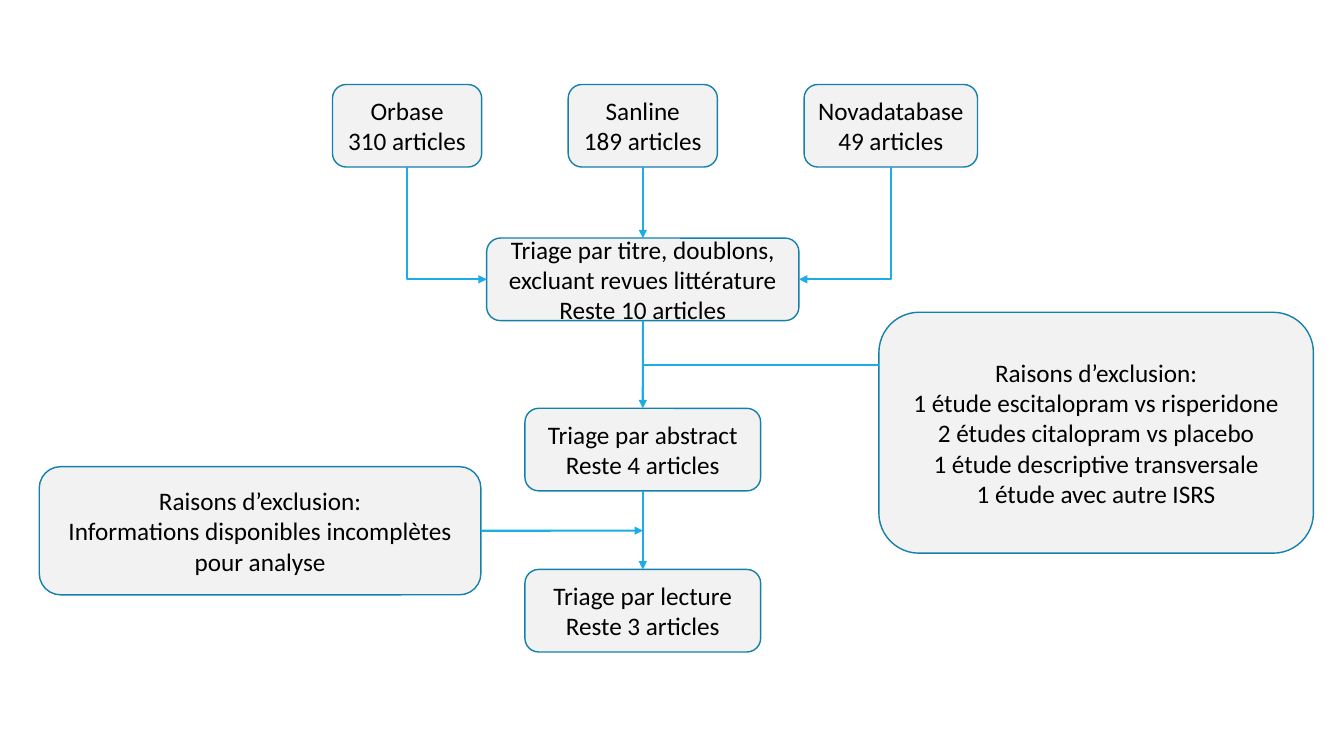
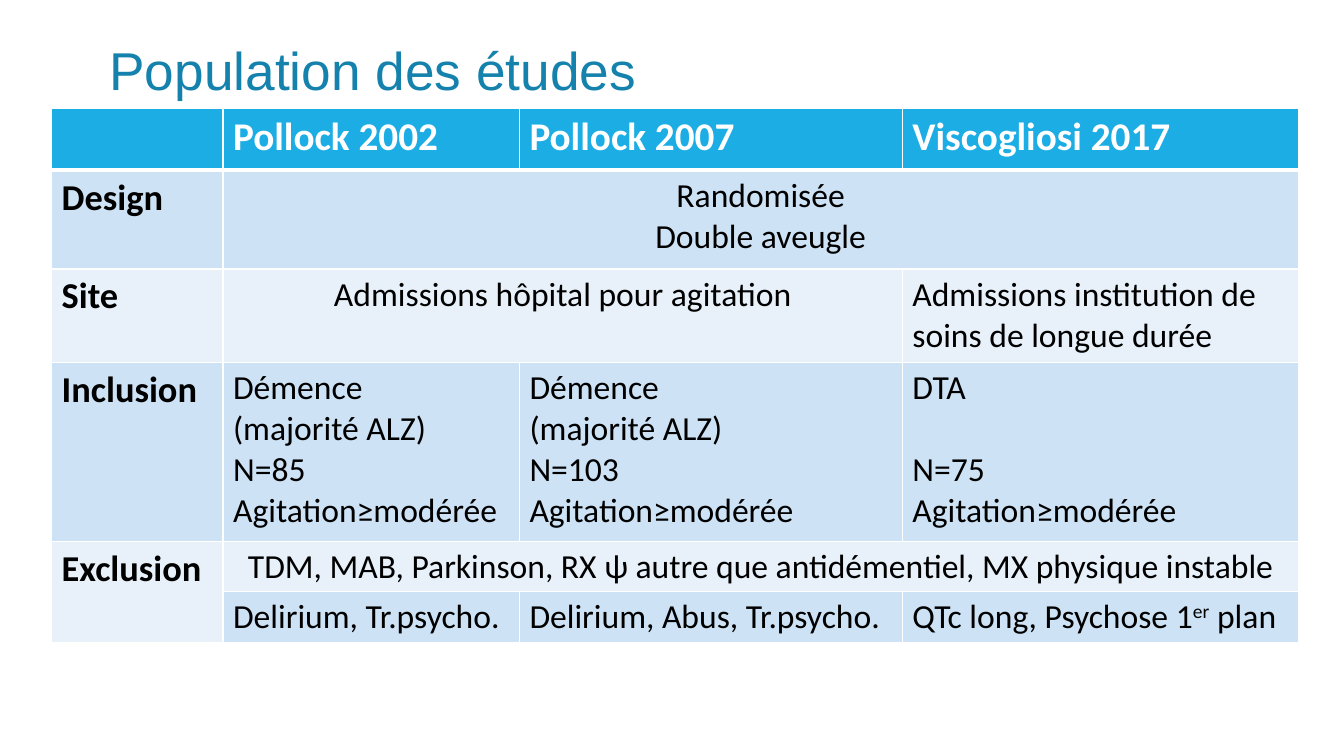
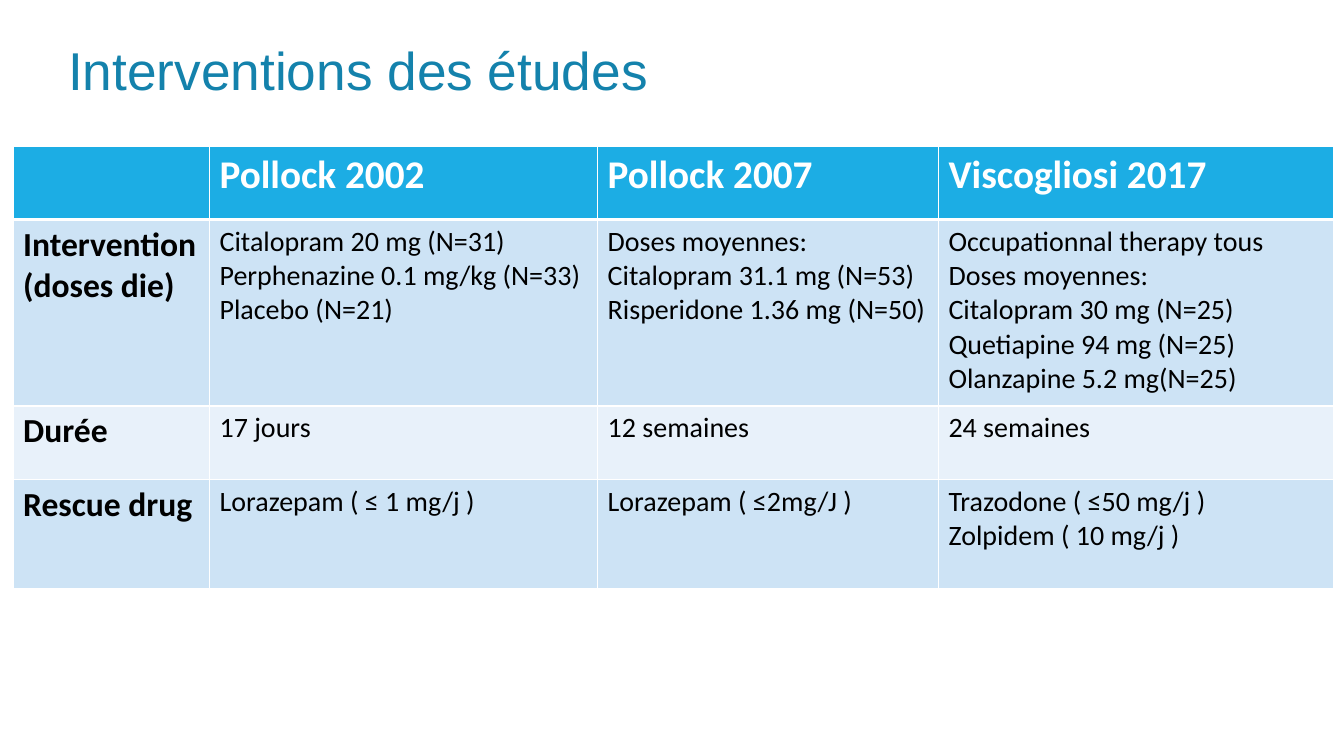
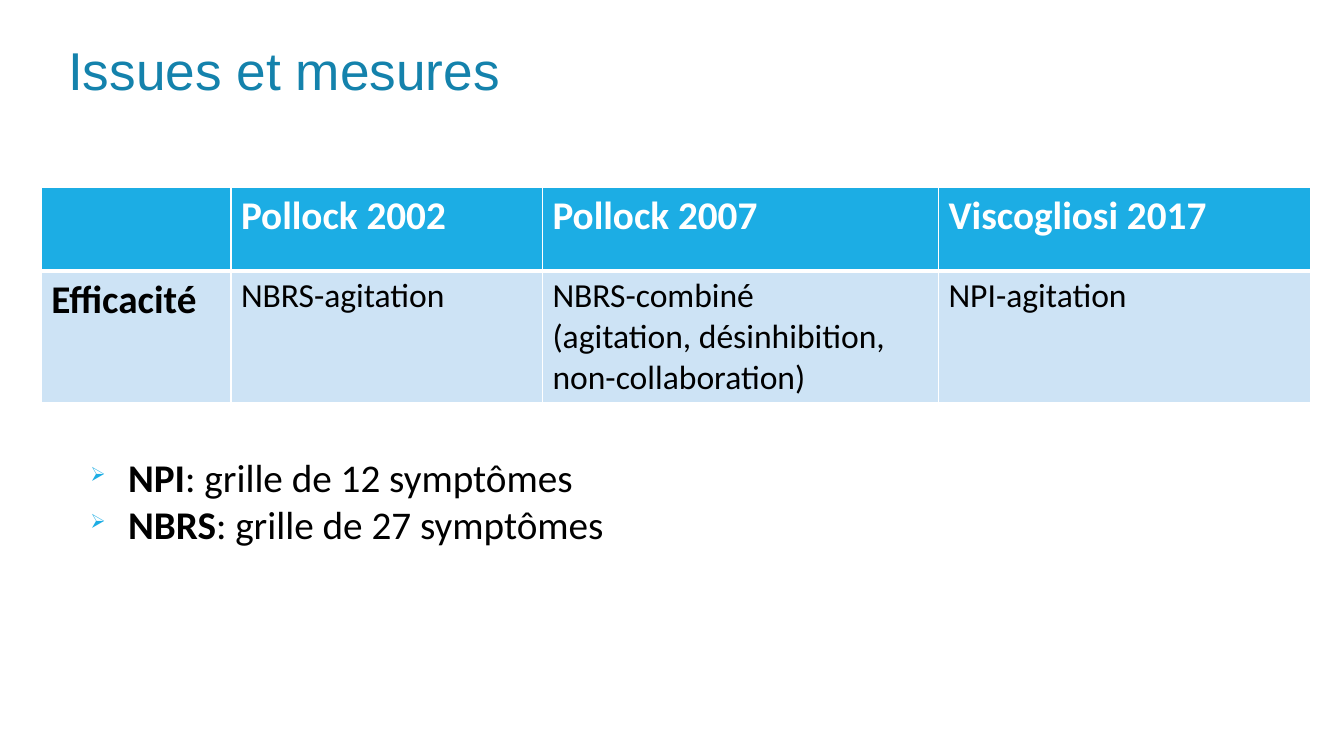
"""Build four slides on a literature review: selection flow, populations, interventions, outcomes."""
from lxml.etree import SubElement
from pptx import Presentation
from pptx.dml.color import RGBColor
from pptx.enum.shapes import MSO_CONNECTOR as Link, MSO_SHAPE as Preset
from pptx.enum.text import MSO_ANCHOR as Anchor, PP_ALIGN as Align
from pptx.oxml import parse_xml
from pptx.oxml.ns import nsdecls, qn
from pptx.util import Cm, Pt

BLACK, WHITE = "000000", "FFFFFF"
ACCENT, TITLE_BLUE, OUTLINE = "1CADE4", "1482AC", "1580A9"
BOX_FILL = "F2F2F2"
BANDS = ("E8F1FA", "CDE3F5")
TOP, LEFT, BOTTOM, RIGHT = range(4)

AXIS = 16.2
BOX_HEIGHT = 2.08
SOURCES = [
    ("Orbase\n310 articles", 10.26, 3.76),
    ("Sanline\n189 articles", AXIS, 3.76),
    ("Novadatabase\n49 articles", 22.45, 4.37),
]
SOURCE_TOP = 2.13
STEPS = [
    ("Triage par titre, doublons, excluant revues littérature\nReste 10 articles", 6, 7.87),
    ("Triage par abstract\nReste 4 articles", 10.29, 5.94),
    ("Triage par lecture\nReste 3 articles", 14.35, 5.94),
]
ABSTRACT_REASONS = (
    "Raisons d’exclusion:\n1 étude escitalopram vs risperidone\n2 études citalopram vs placebo\n"
    "1 étude descriptive transversale\n1 étude avec autre ISRS"
)
READING_REASONS = "Raisons d’exclusion:\nInformations disponibles incomplètes pour analyse"

HEADER = ["", "Pollock 2002", "Pollock 2007", "Viscogliosi 2017"]
POPULATION = {
    "place": (1.3, 2.72),
    "columns": (4.32, 7.47, 9.65, 9.98),
    "heights": (1.57, 2.49, 2.36, 4.5, 1.14, 1.14),
    "sizes": (26, 24),
    "merges": [(1, 1, 1, 3), (2, 1, 2, 2), (4, 0, 5, 0), (4, 1, 4, 3)],
    "rows": [
        ["Design", "Randomisée\nDouble aveugle", "", ""],
        ["Site", "Admissions hôpital pour agitation", "",
         "Admissions institution de soins de longue durée"],
        ["Inclusion", "Démence\n(majorité ALZ)\nN=85 Agitation≥modérée",
         "Démence\n(majorité ALZ)\nN=103\nAgitation≥modérée", "DTA\nN=75\nAgitation≥modérée"],
        ["Exclusion",
         "TDM, MAB, Parkinson, RX ψ autre que antidémentiel, MX physique instable", "", ""],
        ["", "Delirium, Tr.psycho.", "Delirium, Abus, Tr.psycho.", "QTc long, Psychose 1"],
    ],
}
INTERVENTIONS = {
    "place": (0.33, 3.68),
    "columns": (4.95, 9.78, 8.59, 9.96),
    "heights": (1.85, 4.7, 1.85, 2.74),
    "sizes": (24, 20),
    "merges": [],
    "rows": [
        ["Intervention\n(doses die)",
         "Citalopram 20 mg (N=31)\nPerphenazine 0.1 mg/kg (N=33)\nPlacebo (N=21)",
         "Doses moyennes:\nCitalopram 31.1 mg (N=53)\nRisperidone 1.36 mg (N=50)",
         "Occupationnal therapy tous\nDoses moyennes:\nCitalopram 30 mg (N=25)\n"
         "Quetiapine 94 mg (N=25)\nOlanzapine 5.2 mg(N=25)"],
        ["Durée", "17 jours", "12 semaines", "24 semaines"],
        ["Rescue drug", "Lorazepam ( ≤ 1 mg/j )", "Lorazepam ( ≤2mg/J )",
         "Trazodone ( ≤50 mg/j )\nZolpidem ( 10 mg/j )"],
    ],
}
OUTCOMES = {
    "place": (1.04, 4.72),
    "columns": (4.78, 7.85, 9.98, 9.37),
    "heights": (2.11, 3.3),
    "sizes": (28, 24),
    "merges": [],
    "rows": [
        ["Efficacité", "NBRS-agitation",
         "NBRS-combiné\n(agitation, désinhibition, non-collaboration)", "NPI-agitation"],
    ],
}
SCALES = [("NPI", ": grille de 12 symptômes"), ("NBRS", ": grille de 27 symptômes")]


def rgb(value):
    return RGBColor.from_string(value)


def style_span(span, size, color=BLACK, bold=False, font="Calibri"):
    span.font.name, span.font.size, span.font.bold = font, Pt(size), bold
    span.font.color.rgb = rgb(color)


def write(frame, text, size, color=BLACK, bold=False, align=Align.LEFT, font="Calibri"):
    frame.text = text
    frame.word_wrap = True
    for para in frame.paragraphs:
        para.alignment = align
        for span in para.runs:
            style_span(span, size, color, bold, font)


def add_page(deck):
    return deck.slides.add_slide(deck.slide_layouts[6])


def add_title(page, text, left):
    frame = page.shapes.add_textbox(Cm(left), 0, Cm(29.21), Cm(3.68)).text_frame
    write(frame, text, 38, TITLE_BLUE, font="Arial")
    frame.vertical_anchor = Anchor.MIDDLE
    frame.paragraphs[0].line_spacing = 0.9


def add_box(page, text, left, top, width, height=BOX_HEIGHT):
    box = page.shapes.add_shape(Preset.ROUNDED_RECTANGLE, Cm(left), Cm(top), Cm(width), Cm(height))
    box.shadow.inherit = False
    box.fill.solid()
    box.fill.fore_color.rgb = rgb(BOX_FILL)
    box.line.color.rgb = rgb(OUTLINE)
    box.line.width = Pt(1)
    write(box.text_frame, text, 18, align=Align.CENTER)
    box.text_frame.vertical_anchor = Anchor.MIDDLE
    return box


def add_link(page, start=(0, 0), end=(0, 0), kind=Link.STRAIGHT, arrow=True):
    link = page.shapes.add_connector(kind, *(Cm(value) for value in (*start, *end)))
    link.line.color.rgb = rgb(ACCENT)
    link.line.width = Pt(1.5)
    if arrow:
        SubElement(link.line._get_or_add_ln(), qn("a:tailEnd"), type="triangle")
    SubElement(link.element.spPr, qn("a:effectLst"))
    return link


def join_down(page, upper, lower):
    link = add_link(page)
    link.begin_connect(upper, BOTTOM)
    link.end_connect(lower, TOP)


def join_corner(page, source, target, side):
    link = add_link(page, kind=Link.ELBOW)
    link.begin_connect(source, BOTTOM)
    link.end_connect(target, side)
    start_x, start_y = source.left + source.width // 2, source.top + source.height
    end_x = target.left + (target.width if side == RIGHT else 0)
    end_y = target.top + target.height // 2
    across, down = abs(end_x - start_x), end_y - start_y
    link.left, link.top = (start_x + end_x - down) // 2, (start_y + end_y - across) // 2
    link.width, link.height = down, across
    turn, flip = (16200000, "1") if side == LEFT else (5400000, "0")
    frame = link.element.spPr.find(qn("a:xfrm"))
    for name, value in (("rot", str(turn)), ("flipH", flip), ("flipV", "0")):
        frame.set(name, value)
    link.element.spPr.find(qn("a:prstGeom")).set("prst", "bentConnector2")


def set_borders(cell, row):
    widths = {"L": 1, "R": 1, "T": 3 if row == 1 else 1, "B": 3 if row == 0 else 1}
    for place, (side, width) in enumerate(widths.items()):
        border = parse_xml(
            f'<a:ln{side} {nsdecls("a")} w="{Pt(width)}"><a:solidFill>'
            f'<a:srgbClr val="{WHITE}"/></a:solidFill></a:ln{side}>')
        cell._tc.get_or_add_tcPr().insert(place, border)


def add_grid(page, content):
    columns, heights = content["columns"], content["heights"]
    label_size, body_size = content["sizes"]
    table = page.shapes.add_table(
        len(heights), len(columns), *(Cm(value) for value in content["place"]),
        Cm(sum(columns)), Cm(sum(heights))).table
    for column, width in zip(table.columns, columns):
        column.width = Cm(width)
    for row, height in zip(table.rows, heights):
        row.height = Cm(height)
    for top, left, bottom, right in content["merges"]:
        table.cell(top, left).merge(table.cell(bottom, right))
    for row, texts in enumerate([HEADER, *content["rows"]]):
        for column, text in enumerate(texts):
            cell = table.cell(row, column)
            cell.fill.solid()
            cell.fill.fore_color.rgb = rgb(BANDS[row % 2] if row else ACCENT)
            set_borders(cell, row)
            if text:
                size = 28 if row == 0 else body_size if column else label_size
                wide = cell.is_merge_origin and cell.span_width > 1
                write(cell.text_frame, text, size, BLACK if row else WHITE,
                      row == 0 or column == 0, Align.CENTER if wide else Align.LEFT)
    return table


def build_flow(deck):
    page = add_page(deck)
    sources = [add_box(page, text, center - width / 2, SOURCE_TOP, width)
               for text, center, width in SOURCES]
    steps = [add_box(page, text, AXIS - width / 2, top, width) for text, top, width in STEPS]
    join_corner(page, sources[0], steps[0], LEFT)
    join_corner(page, sources[2], steps[0], RIGHT)
    chain = [sources[1], *steps]
    for upper, lower in zip(chain, chain[1:]):
        join_down(page, upper, lower)
    add_box(page, ABSTRACT_REASONS, 22.15, 7.87, 10.95, 6.07)
    add_link(page, (AXIS, 9.2), (22.15, 9.2), arrow=False)
    reading = add_box(page, READING_REASONS, 0.99, 11.76, 11.13, 3.23)
    add_link(page, (12.12, 13.37), (AXIS, 13.37)).begin_connect(reading, RIGHT)


def build_population(deck):
    page = add_page(deck)
    add_title(page, "Population des études", 2.51)
    table = add_grid(page, POPULATION)
    table.cell(3, 3).text_frame.paragraphs[1].space_before = Pt(29)
    para = table.cell(5, 3).text_frame.paragraphs[0]
    for text, baseline in (("er", "30000"), (" plan", "0")):
        span = para.add_run()
        span.text = text
        style_span(span, 24)
        span.font._element.set("baseline", baseline)


def build_interventions(deck):
    page = add_page(deck)
    add_title(page, "Interventions des études", 1.47)
    add_grid(page, INTERVENTIONS)


def build_outcomes(deck):
    page = add_page(deck)
    add_title(page, "Issues et mesures", 1.47)
    add_grid(page, OUTCOMES)
    frame = page.shapes.add_textbox(Cm(2.03), Cm(11.3), Cm(31.19), Cm(2.64)).text_frame
    write(frame, "\n".join(name for name, _ in SCALES), 28, bold=True)
    for para, (_, detail) in zip(frame.paragraphs, SCALES):
        span = para.add_run()
        span.text = detail
        style_span(span, 28)
        properties = para._p.get_or_add_pPr()
        properties.set("marL", str(Cm(0.95)))
        properties.set("indent", str(-Cm(0.95)))
        SubElement(SubElement(properties, qn("a:buClr")), qn("a:srgbClr"), val=ACCENT)
        SubElement(properties, qn("a:buSzPct"), val="50000")
        SubElement(properties, qn("a:buChar"), char="➢")


def main():
    deck = Presentation()
    deck.slide_width, deck.slide_height = Cm(33.87), Cm(19.05)
    for build in (build_flow, build_population, build_interventions, build_outcomes):
        build(deck)
    deck.save("out.pptx")


if __name__ == "__main__":
    main()
